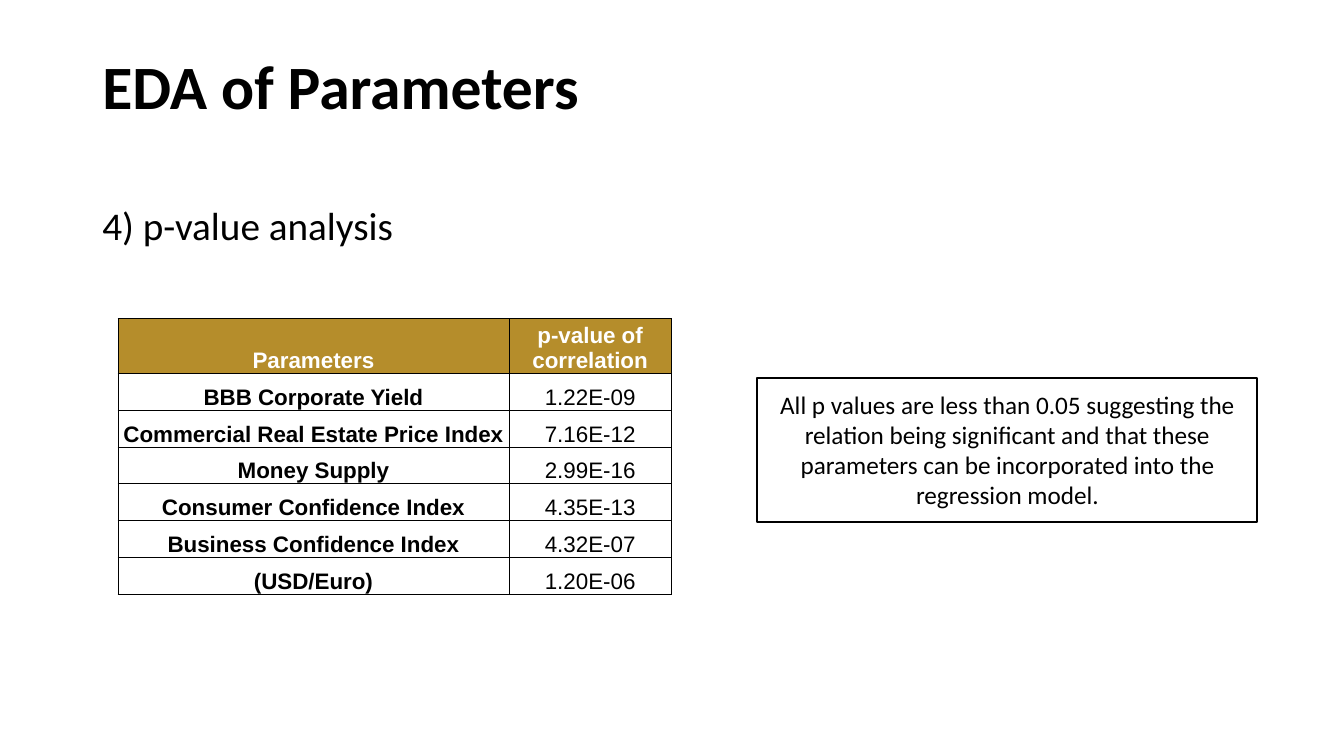
from dataclasses import dataclass

from lxml.etree import SubElement
from pptx import Presentation
from pptx.dml.color import RGBColor as RGB
from pptx.enum.shapes import MSO_SHAPE as Shape
from pptx.enum.text import MSO_ANCHOR as Anchor, MSO_AUTO_SIZE as AutoSize, PP_ALIGN as Align
from pptx.oxml.ns import qn
from pptx.util import Inches, Pt


@dataclass(frozen=True)
class Theme:
    ink: RGB = RGB(0, 0, 0)
    white: RGB = RGB(255, 255, 255)
    gold: RGB = RGB(0xB5, 0x8D, 0x2B)
    text_font: str = "Calibri"
    table_font: str = "Arial"
    title: int = 44
    body: int = 28
    note: int = 18
    cell: int = 16
    frame: float = 1
    rule: float = 0.5


THEME = Theme()

# The slide is a grid of 80 columns and 45 rows of equal square units
WIDTH, HEIGHT = Inches(13.33), Inches(7.5)
COLS, ROWS = 80, 45

HEADER = ("Parameters", "p-value of correlation")
P_VALUES = (
    ("BBB Corporate Yield", "1.22E-09"),
    ("Commercial Real Estate Price Index", "7.16E-12"),
    ("Money Supply", "2.99E-16"),
    ("Consumer Confidence Index", "4.35E-13"),
    ("Business Confidence Index", "4.32E-07"),
    ("(USD/Euro)", "1.20E-06"),
)
NOTE = ("All p values are less than 0.05 suggesting the relation being significant "
        "and that these parameters can be incorporated into the regression model.")


def across(n):
    return round(WIDTH * n / COLS)


def down(n):
    return round(HEIGHT * n / ROWS)


def grid(left, top, width, height):
    return across(left), down(top), across(width), down(height)


def assign(target, values):
    for name, value in values.items():
        setattr(target, name, value)


def write(tf, text, size, font=THEME.text_font, color=THEME.ink, bold=False, **para):
    p = tf.paragraphs[0]
    assign(p, para)
    r = p.add_run()
    r.text = text
    assign(r.font, {"name": font, "size": Pt(size), "bold": bold})
    r.font.color.rgb = color


def add_title(slide, text, box):
    s = slide.shapes.title
    assign(s, dict(zip(("left", "top", "width", "height"), box)))
    assign(s.text_frame, {"vertical_anchor": Anchor.MIDDLE, "auto_size": AutoSize.NONE})
    write(s.text_frame, text, THEME.title, bold=True, alignment=Align.LEFT, line_spacing=0.9)


def add_text(slide, text, box, size, **para):
    tf = slide.shapes.add_textbox(*box).text_frame
    tf.word_wrap = True
    write(tf, text, size, **para)


def add_frame(slide, box):
    s = slide.shapes.add_shape(Shape.RECTANGLE, *box)
    s.shadow.inherit = False
    s.fill.background()
    s.line.color.rgb = THEME.ink
    s.line.width = Pt(THEME.frame)


def add_borders(cell):
    tcPr = cell._tc.get_or_add_tcPr()
    for side in ("lnL", "lnR", "lnT", "lnB"):
        ln = SubElement(tcPr, qn(f"a:{side}"), w=str(Pt(THEME.rule)))
        fill = SubElement(ln, qn("a:solidFill"))
        SubElement(fill, qn("a:srgbClr"), val=str(THEME.ink))


def fill_cell(cell, text, is_header, bold):
    add_borders(cell)
    if is_header:
        cell.fill.solid()
        cell.fill.fore_color.rgb = THEME.gold
    else:
        cell.fill.background()
    inset = Inches(0.01)
    assign(cell, {"vertical_anchor": Anchor.BOTTOM, "margin_left": inset,
                  "margin_right": inset, "margin_top": inset, "margin_bottom": 0})
    write(cell.text_frame, text, THEME.cell, THEME.table_font,
          THEME.white if is_header else THEME.ink, bold, alignment=Align.CENTER)


def add_p_value_table(slide, left, top, col_widths, header_height, row_height):
    rows = (HEADER, *P_VALUES)
    height = header_height + row_height * len(P_VALUES)
    box = grid(left, top, sum(col_widths), height)
    table = slide.shapes.add_table(len(rows), len(HEADER), *box).table
    assign(table, {"first_row": False, "horz_banding": False})
    for column, width in zip(table.columns, col_widths):
        column.width = across(width)
    for i, texts in enumerate(rows):
        table.rows[i].height = down(row_height if i else header_height)
        for j, text in enumerate(texts):
            fill_cell(table.cell(i, j), text, is_header=i == 0, bold=i == 0 or j == 0)


def main():
    prs = Presentation()
    assign(prs, {"slide_width": WIDTH, "slide_height": HEIGHT})
    slide = prs.slides.add_slide(prs.slide_layouts[5])

    # Heading and topic
    add_title(slide, "EDA of Parameters", grid(5.5, 2.4, 69, 5.9))
    add_text(slide, "4) p-value analysis", grid(5.5, 12, 69, 28.55), THEME.body,
             line_spacing=0.9, space_before=Pt(10))

    # Table of p-values
    add_p_value_table(slide, 7.02, 18.96, (23.28, 9.66), 3, 2.19)

    # Framed conclusion
    add_text(slide, NOTE, grid(43.86, 22.86, 32.22, 7.86), THEME.note, alignment=Align.CENTER)
    add_frame(slide, grid(45.06, 22.5, 29.76, 8.58))

    prs.save("out.pptx")


if __name__ == "__main__":
    main()
